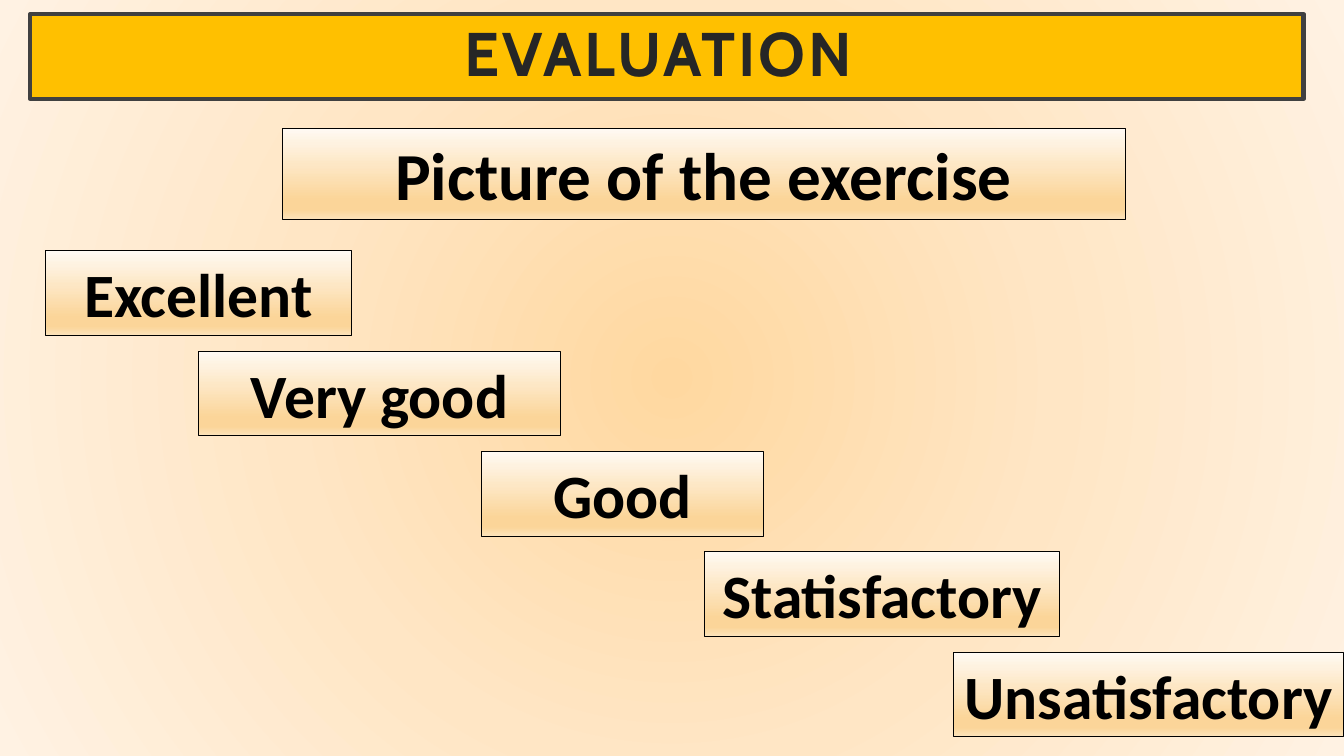
from lxml import etree
from pptx import Presentation
from pptx.dml.color import RGBColor
from pptx.enum.shapes import MSO_SHAPE
from pptx.enum.text import MSO_ANCHOR, MSO_AUTO_SIZE, PP_ALIGN
from pptx.oxml.ns import qn
from pptx.util import Inches, Pt

RECT = MSO_SHAPE.RECTANGLE
CENTER = PP_ALIGN.CENTER
MIDDLE = MSO_ANCHOR.MIDDLE
GROW = MSO_AUTO_SIZE.SHAPE_TO_FIT_TEXT

THEME = {
    "glow": [(0, "FFD8A0"), (50, "FFE6C5"), (100, "FFF2E3")],
    "sheen": [(0, "FFFAF4"), (17, "FEF2E0"), (40, "FDE7C5"),
              (78, "FBD599"), (89, "FBD599"), (100, "FCE3BB")],
    "gold": "FFC000", "frame": "404040", "dark": "262626", "black": "000000",
    "head": "Cabin", "body": "Calibri",
    "title": 44, "topic": 48, "grade": 44,
}
CELL = Inches(0.1)


def blend(owner, stops, round=False):
    fill = owner.fill
    fill.gradient()
    grad = next((owner if round is False else slide).element.iter(qn("a:gradFill")))
    grad.clear()
    grad.set("rotWithShape", "1")
    row = etree.SubElement(grad, qn("a:gsLst"))
    for share, tone in stops:
        stop = etree.SubElement(row, qn("a:gs"), pos=str(share * 1000))
        etree.SubElement(stop, qn("a:srgbClr"), val=tone)
    if round:
        way = etree.SubElement(grad, qn("a:path"), path="circle")
        etree.SubElement(way, qn("a:fillToRect"), l="50000", t="50000", r="50000", b="50000")
    else:
        etree.SubElement(grad, qn("a:lin"), ang="5400000", scaled="0")


def label(text, left, top, wide, high, size, font=THEME["body"], ink=THEME["black"],
          fill=None, line=THEME["black"], weight=0.75, inset=None, space=None, pitch=None):
    box = slide.shapes.add_shape(RECT, *(round(n * CELL) for n in (left, top, wide, high)))
    box.shadow.inherit = False
    if fill:
        box.fill.solid()
        box.fill.fore_color.rgb = RGBColor.from_string(fill)
    else:
        blend(box, THEME["sheen"])
    box.line.color.rgb = RGBColor.from_string(line)
    box.line.width = Pt(weight)
    frame = box.text_frame
    frame.word_wrap = True
    frame.vertical_anchor = MIDDLE
    if inset:
        frame.margin_left = frame.margin_right = inset[0] * CELL
        frame.margin_top = frame.margin_bottom = inset[1] * CELL
    else:
        frame.auto_size = GROW
    para = frame.paragraphs[0]
    para.alignment = CENTER
    if pitch:
        para.line_spacing = pitch
    run = para.add_run()
    run.text = text
    run.font.name = font
    run.font.size = Pt(size)
    run.font.bold = True
    run.font.color.rgb = RGBColor.from_string(ink)
    if space:
        next(box.element.iter(qn("a:rPr"))).set("spc", str(space * 100))


deck = Presentation()
deck.slide_width = Inches(13.33)
deck.slide_height = Inches(7.5)
slide = deck.slides.add_slide(deck.slide_layouts[6])
blend(slide.background, THEME["glow"], round=True)

label("EVALUATION ", 3, 1.4, 126.3, 8.4, THEME["title"], font=THEME["head"],
      ink=THEME["dark"], fill=THEME["gold"], line=THEME["frame"], weight=3,
      inset=(3, 2), space=2, pitch=0.9)
label("Picture of the exercise", 28, 12.7, 83.6, 9.1, THEME["topic"])

GRADES = [
    ("Excellent", 4.5, 30.4),
    ("Very good", 19.7, 35.9),
    ("Good", 47.8, 27.9),
    ("Statisfactory", 69.9, 35.2),
    ("Unsatisfactory", 94.6, 38.7),
]
FIRST, STEP, HIGH = 24.9, 9.95, 8.4
for step, (grade, left, wide) in enumerate(GRADES):
    label(grade, left, FIRST + step * STEP, wide, HIGH, THEME["grade"])

deck.save("out.pptx")
